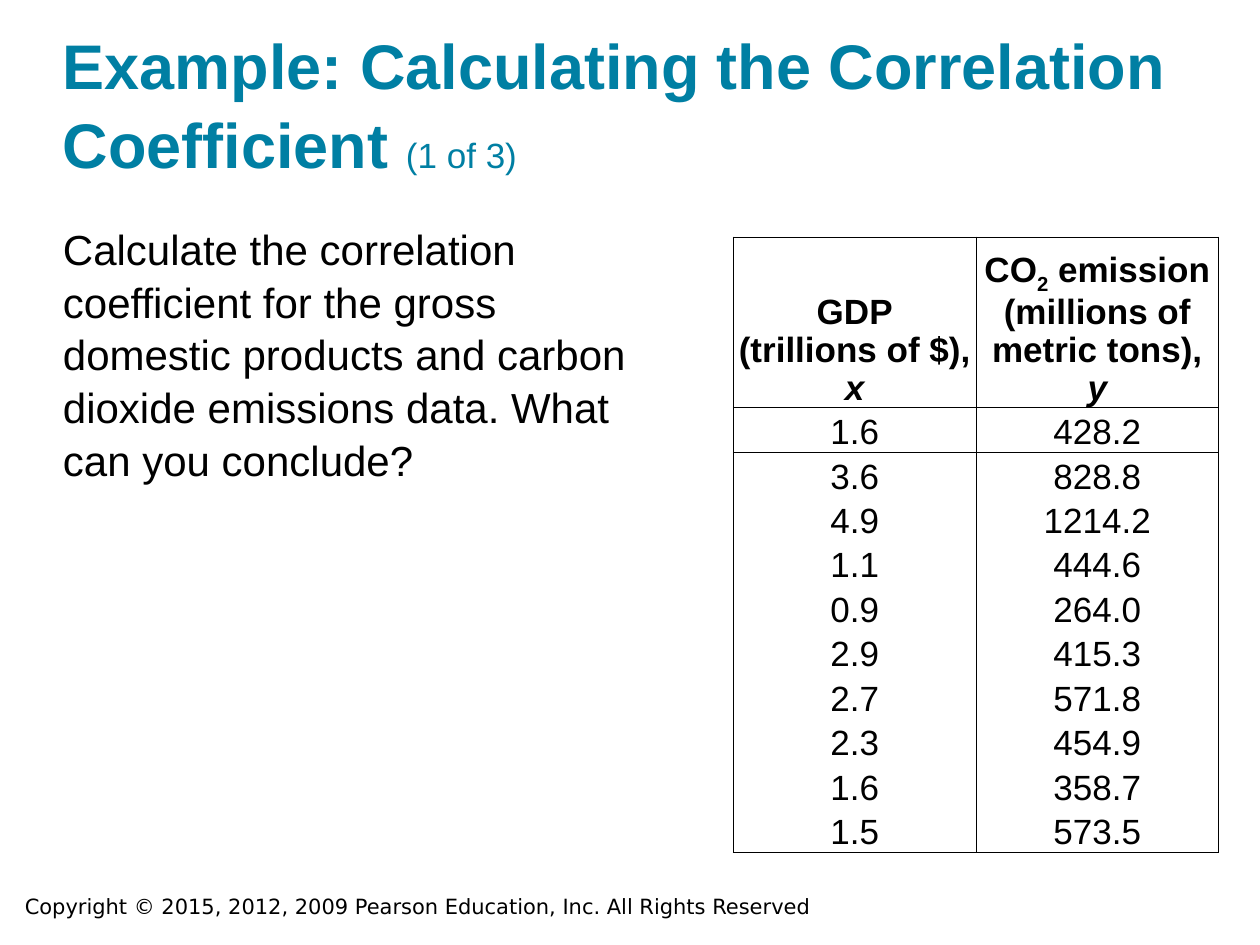
from lxml.etree import SubElement
from pptx import Presentation
from pptx.dml.color import RGBColor
from pptx.enum.text import MSO_ANCHOR, PP_ALIGN
from pptx.oxml.ns import qn
from pptx.util import Cm, Pt

TEAL, BLACK, WHITE = "007FA3", "000000", "FFFFFF"
NO_STYLE_TABLE = "{2D5ABB26-0587-4C30-8999-92F81FD0307C}"

# A paragraph is a list of (text, format) runs.
TITLE = [("Example: Calculating the Correlation Coefficient ", {"size": Pt(36), "bold": True}),
         ("(1 of 3)", {"size": Pt(20)})]
QUESTION = [("Calculate the correlation coefficient for the gross domestic products "
             "and carbon dioxide emissions data. What can you conclude?", {"size": Pt(24)})]
COPYRIGHT = [("Copyright © 2015, 2012, 2009 Pearson Education, Inc. All Rights Reserved",
              {"size": Pt(12), "name": "DejaVu Sans"})]

CELL = {"size": Pt(20)}
HEAD = {**CELL, "bold": True}
VARIABLE = {**HEAD, "italic": True}
SUBSCRIPT = {**HEAD, "baseline": -26}
HEADINGS = [
    [[("GDP", HEAD)], [("(trillions of $), ", HEAD), ("x", VARIABLE)]],
    [[("CO", HEAD), ("2", SUBSCRIPT), (" emission (millions of metric tons), ", HEAD),
      ("y", VARIABLE)]],
]
DATA = [("1.6", "428.2"), ("3.6", "828.8"), ("4.9", "1214.2"), ("1.1", "444.6"),
        ("0.9", "264.0"), ("2.9", "415.3"), ("2.7", "571.8"), ("2.3", "454.9"),
        ("1.6", "358.7"), ("1.5", "573.5")]

COLUMN_WIDTHS = [4.9, 4.88]
HEADING_HEIGHT, DATA_HEIGHT = 3.28, 8.96


def rgb(value):
    return RGBColor.from_string(value)


def write(frame, paragraphs, color=BLACK, align=PP_ALIGN.LEFT, spacing=1.0):
    for index, runs in enumerate(paragraphs):
        paragraph = frame.paragraphs[0] if index == 0 else frame.add_paragraph()
        paragraph.alignment = align
        paragraph.line_spacing = spacing
        for text, formats in runs:
            run = paragraph.add_run()
            run.text = text
            run.font.color.rgb = rgb(color)
            for key, value in {"name": "Arial", **formats}.items():
                if key == "baseline":
                    run._r.get_or_add_rPr().set("baseline", str(value * 1000))
                else:
                    setattr(run.font, key, value)


def set_margins(target, left, top, right, bottom):
    for side, size in zip(("left", "top", "right", "bottom"), (left, top, right, bottom)):
        setattr(target, f"margin_{side}", Cm(size))


def add_text(slide, runs, position, margins=(0, 0, 0, 0), anchor=MSO_ANCHOR.TOP, **style):
    frame = slide.shapes.add_textbox(*map(Cm, position)).text_frame
    frame.word_wrap = True
    frame.vertical_anchor = anchor
    set_margins(frame, *margins)
    write(frame, [runs], **style)


def add_borders(cell, sides):
    """Draw thin lines on the given sides, a string in the order L, R, T, B."""
    for side in sides:
        line = SubElement(cell._tc.get_or_add_tcPr(), qn(f"a:ln{side}"), w=str(Pt(0.5)))
        fill = SubElement(line, qn("a:solidFill"))
        SubElement(fill, qn("a:srgbClr"), val=BLACK)


def add_emissions_table(slide, left, top):
    rows = HEADINGS, *([[[(value, CELL)]] for value in pair] for pair in DATA)
    table = slide.shapes.add_table(
        len(rows), len(COLUMN_WIDTHS), Cm(left), Cm(top),
        Cm(sum(COLUMN_WIDTHS)), Cm(HEADING_HEIGHT + DATA_HEIGHT)).table
    table.first_row = table.horz_banding = False
    table._tbl.tblPr.find(qn("a:tableStyleId")).text = NO_STYLE_TABLE
    for column, width in zip(table.columns, COLUMN_WIDTHS):
        column.width = Cm(width)

    for index, row in enumerate(rows):
        is_heading = index == 0
        table.rows[index].height = Cm(HEADING_HEIGHT if is_heading else DATA_HEIGHT / len(DATA))
        sides = "LR" + "T" * (index <= 1) + "B" * (is_heading or index == len(DATA))
        for cell, paragraphs in zip(table.rows[index].cells, row):
            set_margins(cell, 0.03, 0.03, 0.03, 0)
            cell.vertical_anchor = MSO_ANCHOR.BOTTOM
            write(cell.text_frame, paragraphs, align=PP_ALIGN.CENTER, spacing=0.97)
            add_borders(cell, sides)
            if is_heading:
                cell.fill.solid()
                cell.fill.fore_color.rgb = rgb(WHITE)
            else:
                cell.fill.background()


def main():
    deck = Presentation()
    deck.slide_width, deck.slide_height = Cm(25.4), Cm(19.05)
    slide = deck.slides.add_slide(deck.slide_layouts[6])
    add_text(slide, COPYRIGHT, (0.25, 17.88, 19.89, 0.76), margins=(0.25, 0.13, 0.25, 0.13))
    add_text(slide, TITLE, (1.27, 0.61, 22.86, 3.05), anchor=MSO_ANCHOR.BOTTOM,
             color=TEAL, spacing=1.05)
    add_text(slide, QUESTION, (1.27, 4.45, 12.07, 5.28), spacing=1.05)
    add_emissions_table(slide, 14.78, 4.78)
    deck.save("out.pptx")


if __name__ == "__main__":
    main()
